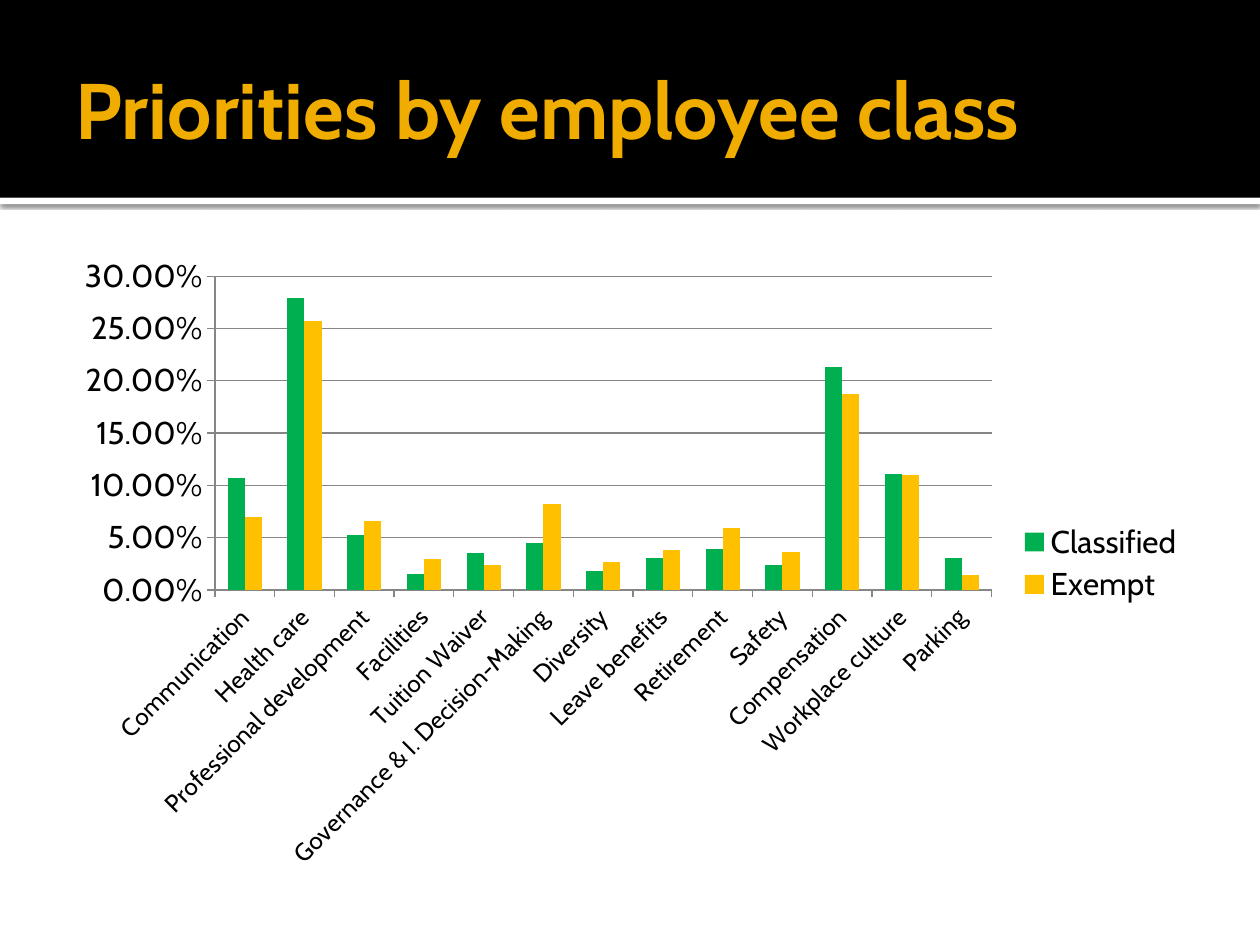
from dataclasses import dataclass

from lxml import etree
from pptx import Presentation
from pptx.chart.data import CategoryChartData
from pptx.dml.color import RGBColor
from pptx.enum import chart as ch, shapes, text
from pptx.oxml import parse_xml
from pptx.oxml.ns import nsdecls, qn
from pptx.util import Inches, Pt

FONT = "Cabin"
BLACK = RGBColor(0x00, 0x00, 0x00)
WHITE = RGBColor(0xFF, 0xFF, 0xFF)
GOLD = RGBColor(0xF0, 0xAD, 0x00)
GREEN = RGBColor(0x00, 0xB0, 0x50)
AMBER = RGBColor(0xFF, 0xC0, 0x00)
GREY = RGBColor(0x86, 0x86, 0x86)


@dataclass
class Band:
    top: float
    height: float
    color: RGBColor
    casts_shadow: bool = False


@dataclass
class EmployeeClass:
    name: str
    color: RGBColor
    shares: tuple[float, ...]


BANDS = (
    Band(1.57, 0.05, WHITE, casts_shadow=True),
    Band(0, 1.57, BLACK),
)
PRIORITIES = (
    "Communication", "Health care", "Professional development", "Facilities",
    "Tuition Waiver", "Governance & I. Decision-Making", "Diversity",
    "Leave benefits", "Retirement", "Safety", "Compensation",
    "Workplace culture", "Parking",
)
CLASSES = (
    EmployeeClass("Classified", GREEN, (
        0.107, 0.279, 0.053, 0.015, 0.035, 0.045, 0.018,
        0.031, 0.039, 0.024, 0.213, 0.111, 0.031)),
    EmployeeClass("Exempt", AMBER, (
        0.07, 0.257, 0.066, 0.03, 0.024, 0.082, 0.027,
        0.038, 0.059, 0.036, 0.187, 0.11, 0.014)),
)


def add_band(slide, band: Band, depth: int) -> None:
    """Add a full-width band behind the title, at the given place in the stack."""
    shape = slide.shapes.add_shape(
        shapes.MSO_SHAPE.RECTANGLE, 0, Inches(band.top), Inches(10), Inches(band.height))
    shape.fill.solid()
    shape.fill.fore_color.rgb = band.color
    shape.line.fill.background()
    shape.shadow.inherit = False
    if band.casts_shadow:
        effects = shape._element.spPr.find(qn("a:effectLst"))
        effects.append(parse_xml(
            f'<a:outerShdw {nsdecls("a")} blurRad="{Pt(2.5)}" dist="{Pt(0.8)}" '
            'dir="5400000" algn="tl" rotWithShape="0">'
            '<a:srgbClr val="000000"><a:alpha val="60000"/></a:srgbClr></a:outerShdw>'))
    slide.shapes._spTree.insert(2 + depth, shape._element)


def format_title(title) -> None:
    title.left, title.top = Inches(0.5), Inches(0.17)
    title.width, title.height = Inches(9), Inches(1.37)
    frame = title.text_frame
    frame.word_wrap = True
    frame.auto_size = text.MSO_AUTO_SIZE.NONE
    frame.vertical_anchor = text.MSO_ANCHOR.MIDDLE
    frame.margin_left = Inches(0.1)
    frame.margin_right = frame.margin_top = frame.margin_bottom = Inches(0.05)
    paragraph = frame.paragraphs[0]
    paragraph.alignment = text.PP_ALIGN.LEFT
    run = paragraph.add_run()
    run.text = "Priorities by employee class"
    run.font.name, run.font.size, run.font.bold = FONT, Pt(45), True
    run.font.color.rgb = GOLD


def format_font(font, size: float) -> None:
    font.name, font.size, font.bold = FONT, Pt(size), False
    font.color.rgb = BLACK


def set_layout(part, x: float, y: float, w: float, h: float, inner: bool = False) -> None:
    """Place a chart part by fractions of the chart area."""
    layout = part.get_or_add_layout() if hasattr(part, "get_or_add_layout") else part.find(qn("c:layout"))
    if layout is None:
        layout = etree.Element(qn("c:layout"))
        part.insert(0, layout)
    for child in list(layout):
        layout.remove(child)
    manual = etree.SubElement(layout, qn("c:manualLayout"))
    settings = [("layoutTarget", "inner")] if inner else []
    settings += [("xMode", "edge"), ("yMode", "edge"), ("x", x), ("y", y), ("w", w), ("h", h)]
    for tag, value in settings:
        etree.SubElement(manual, qn(f"c:{tag}")).set("val", str(value))


def add_priorities_chart(slide) -> None:
    data = CategoryChartData(number_format="0.00%")
    data.categories = PRIORITIES
    for group in CLASSES:
        data.add_series(group.name, group.shares)
    chart = slide.shapes.add_chart(
        ch.XL_CHART_TYPE.COLUMN_CLUSTERED,
        Inches(0.5), Inches(1.94), Inches(9), Inches(5.06), data).chart
    chart.has_title = False
    format_font(chart.font, 18)

    plot = chart.plots[0]
    plot.vary_by_categories = False
    plot.gap_width, plot.overlap = 150, 0
    for series, group in zip(plot.series, CLASSES):
        series.format.fill.solid()
        series.format.fill.fore_color.rgb = group.color

    shares, names = chart.value_axis, chart.category_axis
    shares.minimum_scale, shares.maximum_scale, shares.major_unit = 0, 0.3, 0.05
    shares.tick_labels.number_format = "0.00%"
    shares.tick_labels.number_format_is_linked = False
    shares.has_major_gridlines = True
    for axis, size in ((shares, 18), (names, 14)):
        axis.major_tick_mark = ch.XL_TICK_MARK.OUTSIDE
        format_font(axis.tick_labels.font, size)
    for line in (shares.format.line, names.format.line, shares.major_gridlines.format.line):
        line.color.rgb = GREY
        line.width = Pt(0.75)
    names._element.find(qn("c:txPr")).find(qn("a:bodyPr")).set("rot", "-2700000")

    chart.has_legend = True
    legend = chart.legend
    legend.position = ch.XL_LEGEND_POSITION.RIGHT
    legend.include_in_layout = False
    format_font(legend.font, 18)
    plot_area = chart._chartSpace.chart.plotArea
    set_layout(plot_area, 0.134, 0.05, 0.685, 0.492, inner=True)
    entries = legend._element
    if entries.find(qn("c:layout")) is None:
        entries.find(qn("c:legendPos")).addnext(etree.Element(qn("c:layout")))
    set_layout(entries, 0.84, 0.43, 0.15, 0.14)


def main() -> None:
    deck = Presentation()
    deck.slide_width, deck.slide_height = Inches(10), Inches(7.5)
    slide = deck.slides.add_slide(deck.slide_layouts[5])
    format_title(slide.shapes.title)
    for depth, band in enumerate(BANDS):
        add_band(slide, band, depth)
    add_priorities_chart(slide)
    deck.save("out.pptx")


if __name__ == "__main__":
    main()
